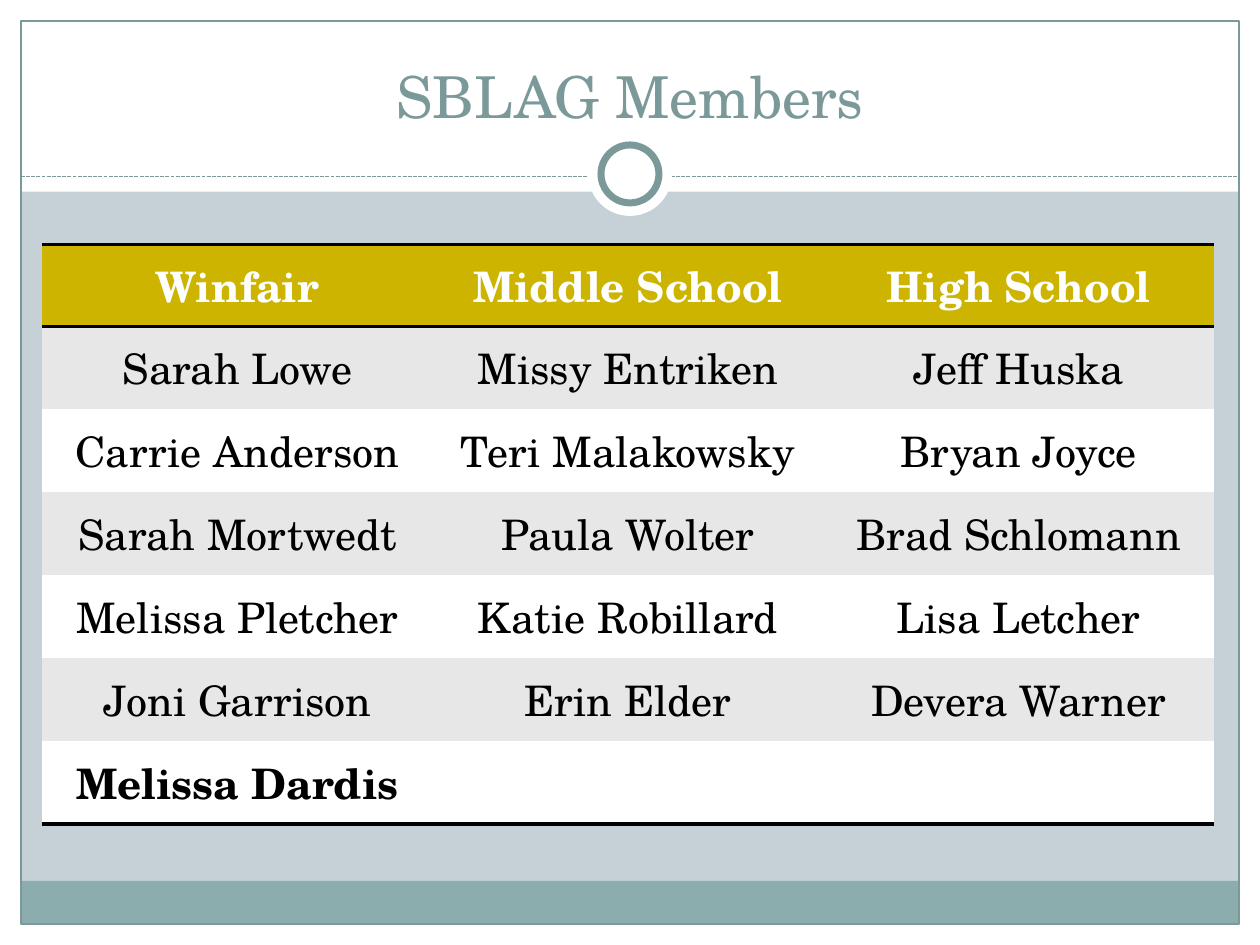
from lxml.etree import SubElement
from pptx import Presentation
from pptx.dml.color import RGBColor
from pptx.enum.dml import MSO_LINE
from pptx.enum.shapes import MSO_CONNECTOR, MSO_SHAPE
from pptx.enum.text import MSO_ANCHOR, PP_ALIGN
from pptx.oxml.ns import qn
from pptx.util import Pt

WHITE = RGBColor(0xFF, 0xFF, 0xFF)
BLACK = RGBColor(0, 0, 0)
BACKGROUND = RGBColor(0xC5, 0xD1, 0xD7)
TEAL = RGBColor(0x7C, 0x99, 0x9A)
FOOTER = RGBColor(0x8C, 0xAD, 0xAE)
GOLD = RGBColor(0xCC, 0xB4, 0x00)
BAND = RGBColor(0xE7, 0xE7, 0xE7)

FONT = "TeX Gyre Schola"
NO_STYLE = "{2D5ABB26-0587-4C30-8999-92F81FD0307C}"
WIDTH, HEIGHT, MARGIN = 720, 540, 12

MEMBERS = [
    ["Winfair", "Middle School", "High School"],
    ["Sarah Lowe", "Missy Entriken", "Jeff Huska"],
    ["Carrie Anderson", "Teri Malakowsky", "Bryan Joyce"],
    ["Sarah Mortwedt", "Paula Wolter", "Brad Schlomann"],
    ["Melissa Pletcher", "Katie Robillard", "Lisa Letcher"],
    ["Joni Garrison", "Erin Elder", "Devera Warner"],
    ["Melissa Dardis", "", ""],
]
BOLD_NAMES = {"Melissa Dardis"}


def add_panel(slide, box, fill=None, line=None, weight=0.75, kind=MSO_SHAPE.RECTANGLE):
    panel = slide.shapes.add_shape(kind, *map(Pt, box))
    panel.shadow.inherit = False
    if fill is None:
        panel.fill.background()
    else:
        panel.fill.solid()
        panel.fill.fore_color.rgb = fill
    if line is None:
        panel.line.fill.background()
    else:
        panel.line.color.rgb = line
        panel.line.width = Pt(weight)


def add_divider(slide, y):
    divider = slide.shapes.add_connector(
        MSO_CONNECTOR.STRAIGHT, Pt(MARGIN), Pt(y), Pt(WIDTH - MARGIN), Pt(y))
    divider.line.color.rgb = TEAL
    divider.line.width = Pt(0.75)
    divider.line.dash_style = MSO_LINE.SQUARE_DOT
    SubElement(divider._element.spPr, qn("a:effectLst"))


def add_circle(slide, center_y, size, **look):
    box = ((WIDTH - size) / 2, center_y - size / 2, size, size)
    add_panel(slide, box, WHITE, kind=MSO_SHAPE.OVAL, **look)


def write_centered(frame, text, color, size, bold=False):
    paragraph = frame.paragraphs[0]
    paragraph.alignment = PP_ALIGN.CENTER
    run = paragraph.add_run()
    run.text = text
    for name, value in {"name": FONT, "size": Pt(size), "bold": bold}.items():
        setattr(run.font, name, value)
    run.font.color.rgb = color


def add_title(slide, text):
    title = slide.shapes.add_textbox(Pt(24), Pt(18), Pt(672), Pt(60)).text_frame
    title.word_wrap = True
    title.vertical_anchor = MSO_ANCHOR.BOTTOM
    write_centered(title, text, TEAL, 33)


def add_rule(cell, side):
    """Draw a black rule on a cell side; call before filling the cell."""
    rule = SubElement(cell._tc.get_or_add_tcPr(), qn(f"a:ln{side}"), w=str(Pt(2)))
    SubElement(SubElement(rule, qn("a:solidFill")), qn("a:srgbClr"), val=str(BLACK))


def add_members_table(slide, rows):
    last = len(rows) - 1
    table = slide.shapes.add_table(
        len(rows), len(rows[0]), Pt(24), Pt(139.7), Pt(669.6), Pt(331.2)).table
    table._tbl.tblPr.find(qn("a:tableStyleId")).text = NO_STYLE
    for r, names in enumerate(rows):
        header = r == 0
        table.rows[r].height = Pt(46.8 if header else 47.4)
        rules = "TB" if header else "B" if r == last else ""
        fill = GOLD if header else BAND if r % 2 else WHITE
        for c, name in enumerate(names):
            cell = table.cell(r, c)
            for side in rules:
                add_rule(cell, side)
            cell.fill.solid()
            cell.fill.fore_color.rgb = fill
            cell.vertical_anchor = MSO_ANCHOR.MIDDLE
            if name:
                write_centered(cell.text_frame, name, WHITE if header else BLACK,
                               24, header or name in BOLD_NAMES)


def main():
    deck = Presentation()
    deck.slide_width, deck.slide_height = Pt(WIDTH), Pt(HEIGHT)
    slide = deck.slides.add_slide(deck.slide_layouts[6])
    slide.background.fill.solid()
    slide.background.fill.fore_color.rgb = BACKGROUND

    # White surround: bottom, header, left, right
    for box in [(0, HEIGHT - MARGIN, WIDTH, MARGIN), (0, 0, WIDTH, 109.5),
                (0, 0, MARGIN, HEIGHT), (WIDTH - MARGIN, 0, MARGIN, HEIGHT)]:
        add_panel(slide, box, WHITE)

    # Footer band and frame
    inner_width = WIDTH - 2 * MARGIN
    add_panel(slide, (MARGIN, 503.3, inner_width, 24.7), FOOTER)
    add_panel(slide, (MARGIN, MARGIN, inner_width, HEIGHT - 2 * MARGIN), line=TEAL)

    # Divider with ring
    add_divider(slide, 100.8)
    add_circle(slide, 99.4, 48)
    add_circle(slide, 99.4, 33.1, line=TEAL, weight=4)

    # Content
    add_title(slide, "SBLAG Members")
    add_members_table(slide, MEMBERS)
    deck.save("out.pptx")


if __name__ == "__main__":
    main()
